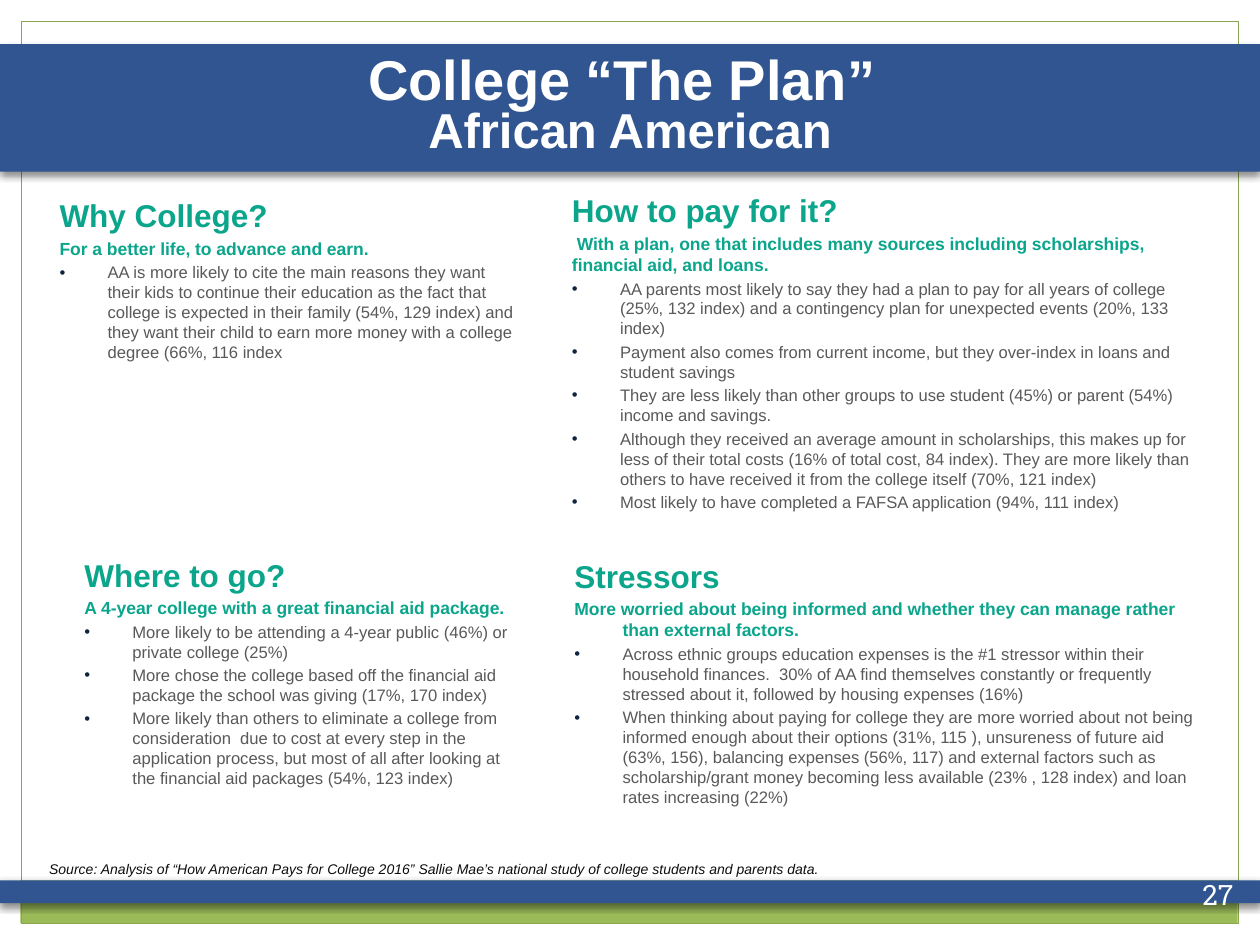
from dataclasses import dataclass

from lxml import etree
from pptx import Presentation
from pptx import util as u
from pptx.dml import color as c
from pptx.enum import shapes, text
from pptx.oxml import ns


@dataclass
class Theme:
    blue: str = "305590"
    green: str = "9BBB59"
    frame: str = "89A54F"
    teal: str = "0AA58B"
    grey: str = "595959"
    navy: str = "0F243E"
    ink: str = "0D0D0D"
    white: str = "FFFFFF"
    font: str = "Arial"
    number_font: str = "Roboto Slab"
    title: float = 32
    subtitle: float = 28
    heading: float = 18
    lead: float = 10
    item: float = 9.5
    source: float = 8
    number: float = 16


theme = Theme()
hanging = u.Cm(0.97)


def style(para, size, colour, bold=False, italic=False, name=theme.font):
    for span in para.runs:
        span.font.name = name
        span.font.size = u.Pt(size)
        span.font.bold = bold
        span.font.italic = italic
        span.font.color.rgb = c.RGBColor.from_string(colour)


def add(parent, tag, **values):
    child = etree.SubElement(parent, ns.qn(tag))
    for key, value in values.items():
        child.set(key, str(value))
    return child


deck = Presentation()
deck.slide_width, deck.slide_height = u.Cm(25.4), u.Cm(19.05)
page = deck.slides.add_slide(deck.slide_layouts[4])
title = page.shapes.title

bars = []
for left, top, width, height, fill, line in [
    (0.41, 17.75, 24.54, 0.86, theme.green, None),
    (0.43, 0.43, 24.54, 18.19, None, theme.frame),
    (0, 17.75, 25.4, 0.46, theme.blue, None),
]:
    bar = page.shapes.add_shape(
        shapes.MSO_SHAPE.RECTANGLE, u.Cm(left), u.Cm(top), u.Cm(width), u.Cm(height)
    )
    bar.shadow.inherit = False
    if fill:
        bar.fill.solid()
        bar.fill.fore_color.rgb = c.RGBColor.from_string(fill)
    else:
        bar.fill.background()
    if line:
        bar.line.color.rgb = c.RGBColor.from_string(line)
        bar.line.width = u.Pt(0.75)
    else:
        bar.line.fill.background()
    title.element.addprevious(bar.element)
    bars.append(bar)

title.left, title.top, title.width, title.height = u.Cm(0), u.Cm(0.89), u.Cm(25.4), u.Cm(2.57)
title.fill.solid()
title.fill.fore_color.rgb = c.RGBColor.from_string(theme.blue)
title.line.fill.background()
title.text_frame.text = "College “The Plan” \nAfrican American"
title.text_frame.auto_size = text.MSO_AUTO_SIZE.NONE
title.text_frame.vertical_anchor = text.MSO_ANCHOR.MIDDLE
for para, size in zip(title.text_frame.paragraphs, (theme.title, theme.subtitle)):
    para.alignment = text.PP_ALIGN.CENTER
    para.line_spacing = 0.8
    style(para, size, theme.white, bold=True)

for band in (bars[-1], title):
    properties = band.element.spPr
    effects = properties.find(ns.qn("a:effectLst"))
    if effects is None:
        effects = add(properties, "a:effectLst")
    shadow = add(effects, "a:outerShdw", blurRad=u.Pt(4), dist=u.Pt(2), dir=5400000, rotWithShape=0)
    add(add(shadow, "a:srgbClr", val="000000"), "a:alpha", val=45000)

sections = [
    (1, (1.02, 3.86, 9.63, 5.92), 0, "Why College?", "For a better life, to advance and earn.", [
        "AA is more likely to cite the main reasons they want their kids to continue their education as the fact that college is expected in their family (54%, 129 index) and they want their child to earn more money with a college degree (66%, 116 index",
    ]),
    (2, (11.35, 3.76, 13.28, 8.51), 0, "How to pay for it?",
     " With a plan, one that includes many sources including scholarships, financial aid, and loans.", [
        "AA parents most likely to say they had a plan to pay for all years of college (25%, 132 index) and a contingency plan for unexpected events (20%, 133 index)",
        "Payment also comes from current income, but they over-index in loans and student savings",
        "They are less likely than other groups to use student (45%) or parent (54%) income and savings.",
        "Although they received an average amount in scholarships, this makes up for less of their total costs (16% of total cost, 84 index). They are more likely than others to have received it from the college itself (70%, 121 index)",
        "Most likely to have completed a FAFSA application (94%, 111 index)",
    ]),
    (3, (1.52, 11.1, 9.14, 5.56), 0, "Where to go?", "A 4-year college with a great financial aid package.", [
        "More likely to be attending a 4-year public (46%) or private college (25%)",
        "More chose the college based off the financial aid package the school was giving (17%, 170 index)",
        "More likely than others to eliminate a college from consideration  due to cost at every step in the application process, but most of all after looking at the financial aid packages (54%, 123 index)",
    ]),
    (4, (11.4, 11.13, 12.95, 5.36), hanging, "Stressors",
     "More worried about being informed and whether they can manage rather than external factors.", [
        "Across ethnic groups education expenses is the #1 stressor within their household finances.  30% of AA find themselves constantly or frequently stressed about it, followed by housing expenses (16%)",
        "When thinking about paying for college they are more worried about not being informed enough about their options (31%, 115 ), unsureness of future aid (63%, 156), balancing expenses (56%, 117) and external factors such as scholarship/grant money becoming less available (23% , 128 index) and loan rates increasing (22%)",
    ]),
]

for index, place, lead_indent, heading, lead, items in sections:
    box = page.placeholders[index]
    box.left, box.top, box.width, box.height = map(u.Cm, place)
    frame = box.text_frame
    frame.text = "\n".join([heading, lead, *items])
    frame.auto_size = text.MSO_AUTO_SIZE.NONE
    frame.vertical_anchor = text.MSO_ANCHOR.TOP
    frame.margin_left = frame.margin_right = u.Cm(0.18)
    frame.margin_top = frame.margin_bottom = u.Cm(0.1)
    for row, para in enumerate(frame.paragraphs):
        is_item = row > 1
        indent = hanging if is_item else lead_indent
        layout = para._p.get_or_add_pPr()
        layout.set("marL", str(indent))
        layout.set("indent", str(-indent))
        if is_item:
            add(add(layout, "a:buClr"), "a:srgbClr", val=theme.navy)
            add(layout, "a:buFont", typeface=theme.font)
            add(layout, "a:buChar", char="•")
            style(para, theme.item, theme.grey)
        else:
            add(layout, "a:buNone")
            style(para, (theme.heading, theme.lead)[row], theme.teal, bold=True)
        para.space_before = u.Pt(2 if row else 0)

source = page.shapes.add_textbox(u.Cm(0.81), u.Cm(17.25), u.Cm(21.41), u.Cm(0.76))
source.text_frame.word_wrap = True
source.text_frame.margin_left = source.text_frame.margin_right = u.Cm(0.18)
source.text_frame.margin_top = source.text_frame.margin_bottom = u.Cm(0.1)
source.text_frame.text = "Source: Analysis of “How American Pays for College 2016” Sallie Mae’s national study of college students and parents data."
style(source.text_frame.paragraphs[0], theme.source, theme.ink, italic=True)

number = page.shapes.add_textbox(u.Cm(23.7), u.Cm(17.42), u.Cm(1.7), u.Cm(1.22))
number.text_frame.word_wrap = True
number.text_frame.vertical_anchor = text.MSO_ANCHOR.MIDDLE
number.text_frame.text = "27"
number.text_frame.paragraphs[0].alignment = text.PP_ALIGN.CENTER
style(number.text_frame.paragraphs[0], theme.number, theme.white, name=theme.number_font)

deck.save("out.pptx")
